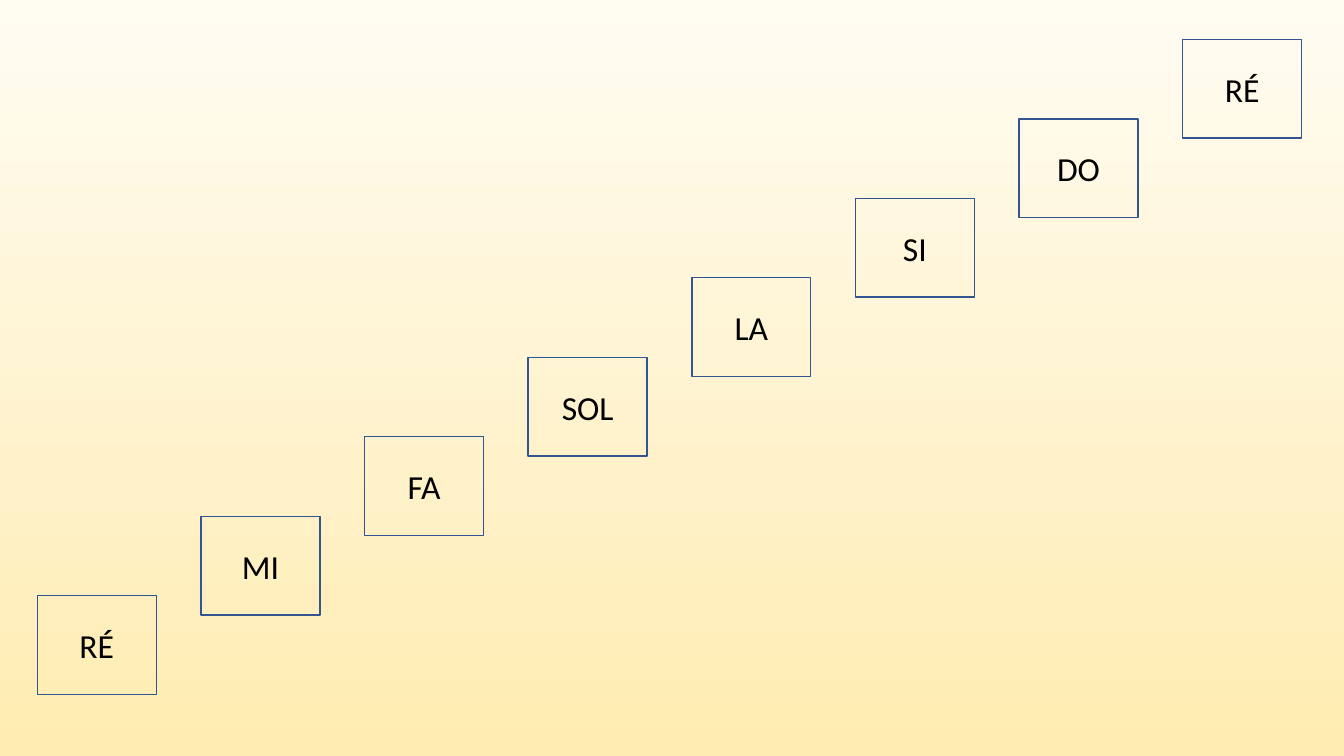
import pptx
import pptx.dml.color
import pptx.enum.shapes
import pptx.enum.text
import pptx.util
from pptx.util import Inches


def rgb(value):
    """Turn a hex string into a colour."""
    return pptx.dml.color.RGBColor.from_string(value)


class ScaleSlide:
    """Draw the elements of a musical scale in one style."""

    font, size = "Calibri", 24
    text_color, line_color = "000000", "325491"

    def __init__(self, s):
        """Keep the current slide."""
        self.s = s

    def background(self, top, bottom):
        """Shade the background from top to bottom."""
        fill = self.s.background.fill
        fill.gradient()
        fill.gradient_angle = 270
        for stop, position, color in zip(fill.gradient_stops, (0, 0.99), (top, bottom)):
            stop.position = position
            stop.color.rgb = rgb(color)

    def note(self, name, left, top, width, height):
        """Add an outlined box with the name of a note."""
        sp = self.s.shapes.add_shape(
            pptx.enum.shapes.MSO_SHAPE.RECTANGLE,
            Inches(left), Inches(top), Inches(width), Inches(height))
        sp.shadow.inherit = False
        sp.fill.background()
        sp.line.color.rgb = rgb(self.line_color)
        sp.line.width = pptx.util.Pt(1)
        tf = sp.text_frame
        tf.text = name
        tf.vertical_anchor = pptx.enum.text.MSO_ANCHOR.MIDDLE
        p = tf.paragraphs[0]
        p.alignment = pptx.enum.text.PP_ALIGN.CENTER
        r = p.runs[0]
        r.font.name = self.font
        r.font.size = pptx.util.Pt(self.size)
        r.font.color.rgb = rgb(self.text_color)


def main():
    """Build the rising scale and save it."""
    prs = pptx.Presentation()
    prs.slide_width, prs.slide_height = Inches(13.33), Inches(7.5)
    scale = ScaleSlide(prs.slides.add_slide(prs.slide_layouts[6]))
    scale.background("FFFCF2", "FFECB2")

    notes = ["RÉ", "MI", "FA", "SOL", "LA", "SI", "DO", "RÉ"]
    first_left, last_left = 0.37, 11.73
    first_top, last_top = 5.91, 0.39
    steps = len(notes) - 1
    for i, name in enumerate(notes):
        left = first_left + i * (last_left - first_left) / steps
        top = first_top + i * (last_top - first_top) / steps
        scale.note(name, left, top, 1.18, 0.98)

    prs.save("out.pptx")


if __name__ == "__main__":
    main()
